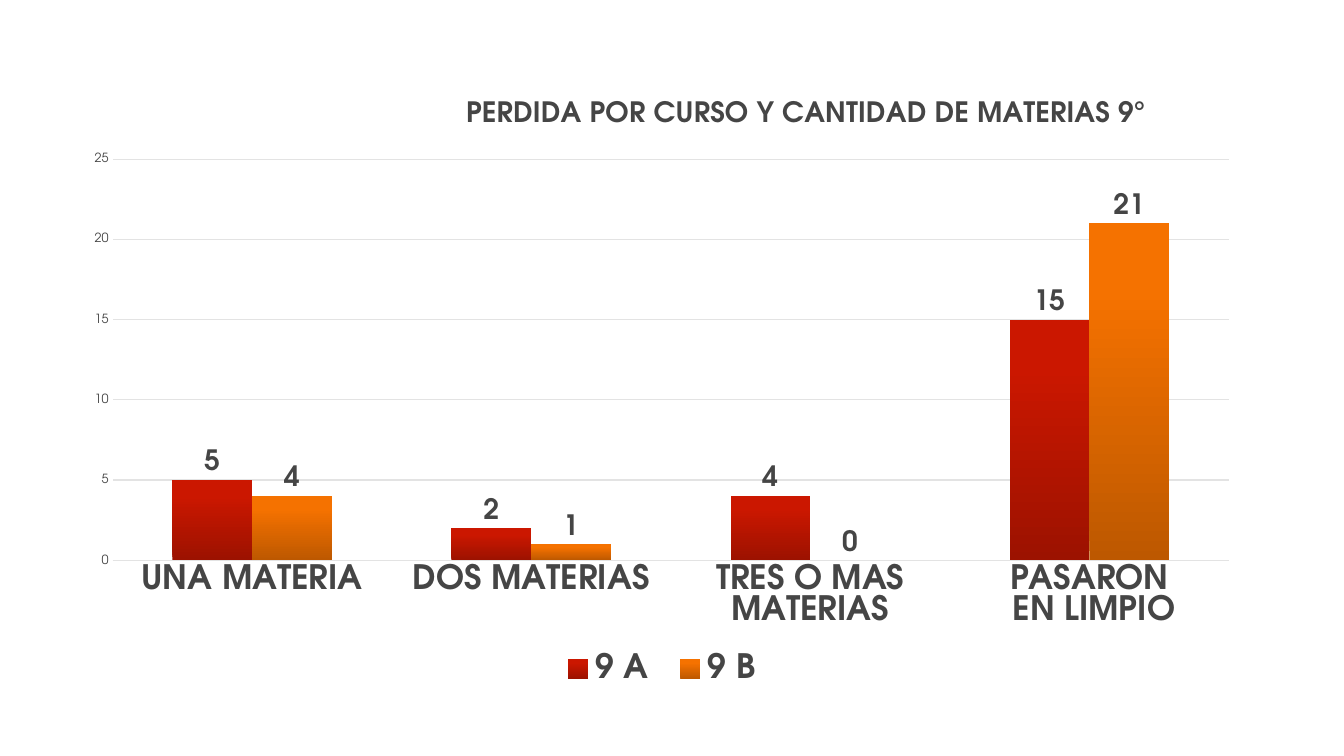
from copy import deepcopy
from dataclasses import dataclass

from lxml.etree import SubElement
from pptx import Presentation
from pptx.chart.data import CategoryChartData
from pptx.dml.color import RGBColor
from pptx.enum.chart import (XL_CHART_TYPE, XL_LABEL_POSITION,
                             XL_LEGEND_POSITION, XL_TICK_MARK)
from pptx.oxml.ns import qn
from pptx.util import Inches, Pt


@dataclass(frozen=True)
class Theme:
    font: str = "TeX Gyre Adventor"
    text: str = "454545"
    grid: str = "E3E3E3"
    background: str = "FFFFFF"
    fills: tuple = (("9C1200", "CB1700", "CB1700"),
                    ("BD5800", "F57200", "F67300"))
    stops: tuple = (0, 0.8, 1)
    scale_size: int = 9
    title_size: int = 20
    label_size: int = 20
    category_size: int = 24
    line_width: float = 0.75


class ChartSlide:
    """Holds the theme and the slide; lengths are shares of the slide."""

    def __init__(self, deck, theme):
        self.deck, self.theme = deck, theme
        self.page = deck.slides.add_slide(deck.slide_layouts[6])
        fill = self.page.background.fill
        fill.solid()
        fill.fore_color.rgb = RGBColor.from_string(theme.background)

    def style_font(self, font, size, bold=True):
        font.name = self.theme.font
        font.size = Pt(size)
        font.bold = bold
        font.color.rgb = RGBColor.from_string(self.theme.text)

    def style_line(self, line):
        line.color.rgb = RGBColor.from_string(self.theme.grid)
        line.width = Pt(self.theme.line_width)

    def place(self, element, index, shares, inner=False):
        """Fix a chart part at shares (x, y, w, h) of the chart frame."""
        for old in element.findall(qn("c:layout")):
            element.remove(old)
        layout = SubElement(element, qn("c:layout"))
        element.insert(index, layout)
        manual = SubElement(layout, qn("c:manualLayout"))
        settings = [("layoutTarget", "inner")] if inner else []
        settings += [("xMode", "edge"), ("yMode", "edge")]
        settings += zip("xywh", shares)
        for name, value in settings:
            SubElement(manual, qn(f"c:{name}")).set("val", str(value))

    def add_columns(self, left, top, width, height, categories, series):
        data = CategoryChartData(number_format="General")
        data.categories = categories
        for name, values in series:
            data.add_series(name, values)
        across, down = self.deck.slide_width, self.deck.slide_height
        frame = self.page.shapes.add_chart(
            XL_CHART_TYPE.COLUMN_CLUSTERED, int(left * across), int(top * down),
            int(width * across), int(height * down), data)
        chart = frame.chart
        self.style_font(chart.font, 10, bold=False)
        plot = chart.plots[0]
        plot.gap_width, plot.overlap, plot.vary_by_categories = 150, 0, False
        for column, colours in zip(plot.series, self.theme.fills):
            self.style_series(column, colours)
        return chart

    def style_series(self, column, colours):
        column.invert_if_negative = False
        fill = column.format.fill
        fill.gradient()
        fill.gradient_angle = 90
        stop_list = column._element.find(".//" + qn("a:gsLst"))
        stop_list.append(deepcopy(stop_list[-1]))
        for stop, colour, position in zip(fill.gradient_stops, colours, self.theme.stops):
            stop.color.rgb = RGBColor.from_string(colour)
            stop.position = position
        labels = column.data_labels
        labels.show_value = True
        labels.position = XL_LABEL_POSITION.OUTSIDE_END
        self.style_font(labels.font, self.theme.label_size)

    def add_title(self, chart, text, shares):
        chart.has_title = True
        title = chart.chart_title
        para = title.text_frame.paragraphs[0]
        span = para.add_run()
        span.text = text
        self.style_font(span.font, self.theme.title_size)
        title.include_in_layout = False
        self.place(title._element, 1, shares)

    def add_legend(self, chart):
        chart.has_legend = True
        chart.legend.position = XL_LEGEND_POSITION.BOTTOM
        chart.legend.include_in_layout = False
        self.style_font(chart.legend.font, self.theme.category_size)

    def style_axes(self, chart, maximum, step):
        category, scale = chart.category_axis, chart.value_axis
        for axis in (category, scale):
            axis.major_tick_mark = axis.minor_tick_mark = XL_TICK_MARK.NONE
        self.style_font(category.tick_labels.font, self.theme.category_size)
        self.style_line(category.format.line)
        self.style_font(scale.tick_labels.font, self.theme.scale_size, bold=False)
        scale.format.line.fill.background()
        scale.minimum_scale, scale.maximum_scale, scale.major_unit = 0, maximum, step
        scale.has_major_gridlines = True
        self.style_line(scale.major_gridlines.format.line)


def main():
    deck = Presentation()
    deck.slide_width, deck.slide_height = Inches(13.33), Inches(7.5)
    slide = ChartSlide(deck, Theme())

    # Columns: failed subjects per class
    chart = slide.add_columns(
        0.053, 0.107, 0.879, 0.808,
        ["UNA MATERIA", "DOS MATERIAS", "TRES O MAS MATERIAS", "PASARON\n EN LIMPIO"],
        [("9 A ", (5, 2, 4, 15)), ("9 B", (4, 1, 0, 21))])
    slide.place(chart._chartSpace.chart.plotArea, 0, (0.035, 0.128, 0.945, 0.657), inner=True)

    # Title, axes and legend
    slide.add_title(chart, "PERDIDA POR CURSO Y CANTIDAD DE MATERIAS 9°", (0.33, 0.02))
    slide.style_axes(chart, maximum=25, step=5)
    slide.add_legend(chart)

    deck.save("out.pptx")


if __name__ == "__main__":
    main()
